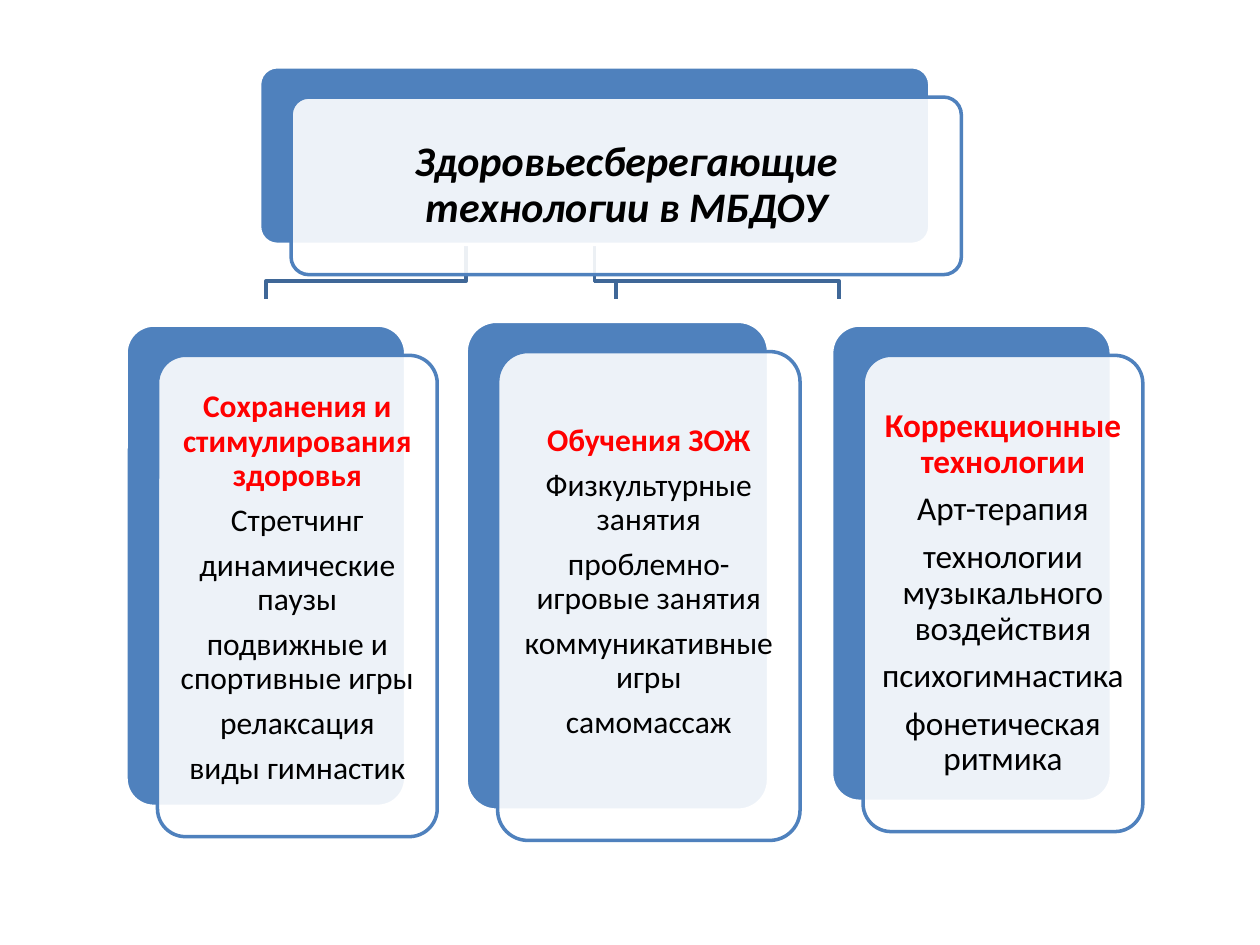
from lxml import etree
from pptx import Presentation
from pptx.dml.color import RGBColor
from pptx.enum.shapes import MSO_SHAPE
from pptx.enum.text import MSO_ANCHOR, PP_ALIGN
from pptx.oxml.ns import qn
from pptx.util import Inches, Pt

ROUNDED = MSO_SHAPE.ROUNDED_RECTANGLE
MIDDLE = MSO_ANCHOR.MIDDLE
CENTER = PP_ALIGN.CENTER

BLUE = RGBColor(0x4F, 0x81, 0xBD)
DARK_BLUE = RGBColor(0x3F, 0x67, 0x97)
WHITE = RGBColor(0xFF, 0xFF, 0xFF)
BLACK = RGBColor(0x00, 0x00, 0x00)
RED = RGBColor(0xFF, 0x00, 0x00)

FONT = "Calibri"
LINE_WIDTH = Pt(2)
PANEL_SHIFT = (0.25, 0.24)
BRANCH_TOP, BRANCH_BEND, BRANCH_END = 1.94, 2.23, 2.37

# Start and end of each branch, from left to right in the drawing order
BRANCHES = [(4.72, 6.66), (4.72, 4.89), (3.7, 2.11)]

# Position and size, text size, inset, extra space below, heading, items
GROUPS = [
    ((1, 2.58, 2.22, 3.82), 18, 0.07, 0.12,
     "Сохранения и стимулирования здоровья",
     ["Стретчинг", "динамические паузы", "подвижные и спортивные игры",
      "релаксация", "виды гимнастик"]),
    ((3.7, 2.55, 2.4, 3.88), 18, 0.07, 0.22,
     "Обучения ЗОЖ",
     ["Физкультурные занятия", "проблемно-игровые занятия",
      "коммуникативные игры", "самомассаж"]),
    ((6.6, 2.58, 2.22, 3.78), 19, 0.08, 0,
     "Коррекционные технологии",
     ["Арт-терапия", "технологии музыкального воздействия",
      "психогимнастика", "фонетическая ритмика"]),
]


def write(paragraph, text, size, color=BLACK, bold=False, italic=False):
    paragraph.alignment = CENTER
    paragraph.line_spacing = 0.9
    paragraph.space_after = Pt(round(size * 0.35, 1))
    run = paragraph.add_run()
    run.text = text
    font = run.font
    font.name, font.size = FONT, Pt(size)
    font.bold, font.italic = bold, italic
    font.color.rgb = color


class Diagram:
    def __init__(self, slide):
        self.shapes = slide.shapes

    def branch(self, start, end):
        """Draw a stepped line from the title down to a group."""
        points = [(start, BRANCH_BEND), (end, BRANCH_BEND), (end, BRANCH_END)]
        builder = self.shapes.build_freeform(Inches(start), Inches(BRANCH_TOP))
        builder.add_line_segments(
            [(Inches(x), Inches(y)) for x, y in points], close=False)
        step = builder.convert_to_shape()
        step.shadow.inherit = False
        step.fill.background()
        step.line.color.rgb = DARK_BLUE
        step.line.width = LINE_WIDTH

    def rounded(self, left, top, width, height, fill, line):
        box = self.shapes.add_shape(
            ROUNDED, Inches(left), Inches(top), Inches(width), Inches(height))
        box.adjustments[0] = 0.1
        box.shadow.inherit = False
        box.fill.solid()
        box.fill.fore_color.rgb = fill
        box.line.color.rgb = line
        box.line.width = LINE_WIDTH
        return box

    def card(self, left, top, width, height, inset, space_below=0):
        """Draw a blue back and a translucent panel; return the panel's text frame."""
        self.rounded(left, top, width, height, BLUE, WHITE)
        shift_x, shift_y = PANEL_SHIFT
        panel = self.rounded(
            left + shift_x, top + shift_y, width, height, WHITE, BLUE)
        color = panel.fill._xPr.find(qn("a:solidFill"))[0]
        etree.SubElement(color, qn("a:alpha"), val="90000")
        frame = panel.text_frame
        frame.word_wrap = True
        frame.vertical_anchor = MIDDLE
        frame.margin_left = frame.margin_right = frame.margin_top = Inches(inset)
        frame.margin_bottom = Inches(inset + space_below)
        return frame


def main():
    prs = Presentation()
    prs.slide_width, prs.slide_height = Inches(10), Inches(7.5)
    diagram = Diagram(prs.slides.add_slide(prs.slide_layouts[6]))

    for start, end in BRANCHES:
        diagram.branch(start, end)

    title = diagram.card(2.06, 0.53, 5.32, 1.41, inset=0.1)
    write(title.paragraphs[0], "Здоровьесберегающие технологии в МБДОУ",
          size=24, bold=True, italic=True)

    for place, size, inset, space_below, heading, items in GROUPS:
        group = diagram.card(*place, inset=inset, space_below=space_below)
        write(group.paragraphs[0], heading, size=size, color=RED, bold=True)
        for item in items:
            write(group.add_paragraph(), item, size=size)

    prs.save("out.pptx")


if __name__ == "__main__":
    main()
